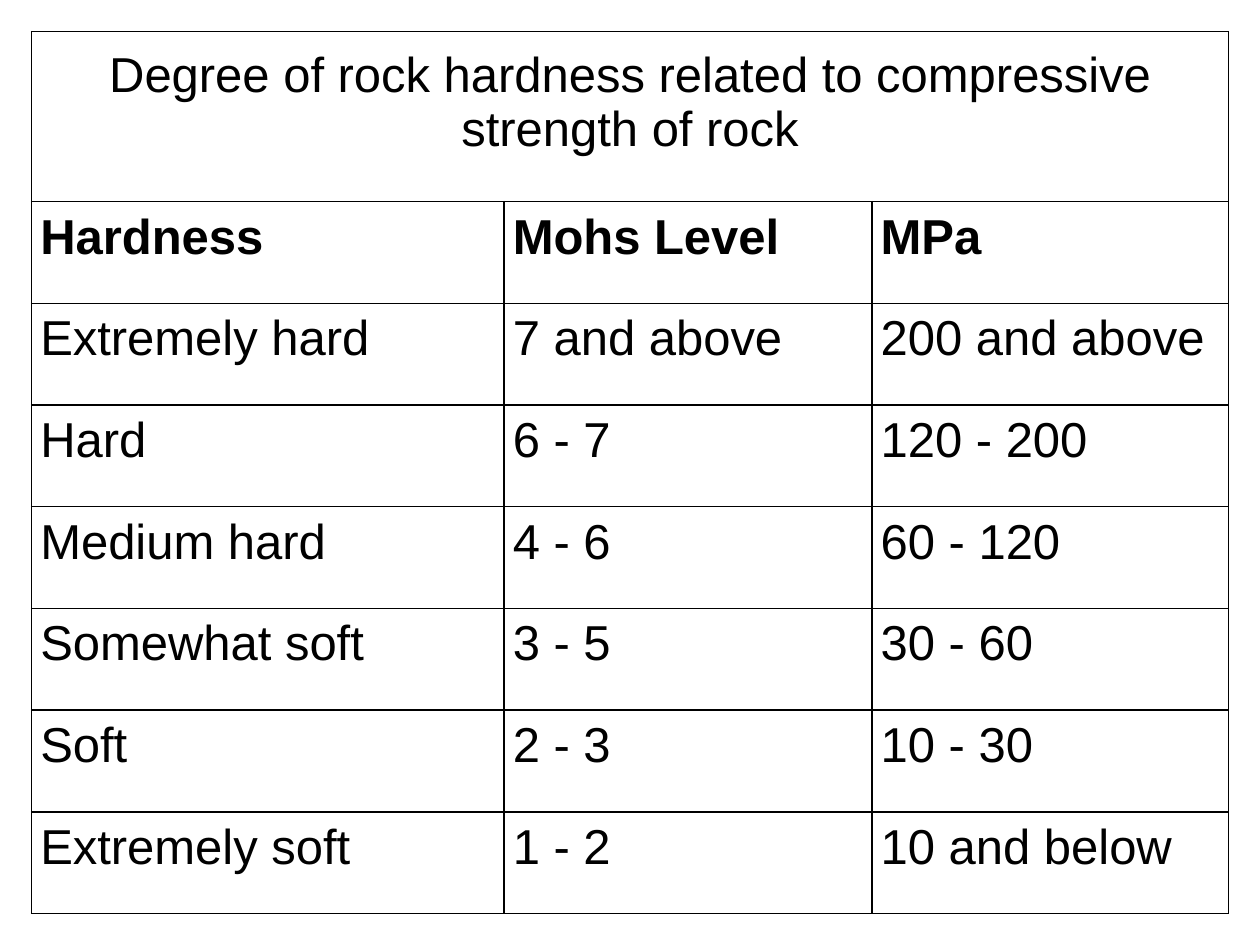
import pptx
import pptx.util
import pptx.dml.color
import pptx.enum.text
import pptx.oxml.ns
import lxml.etree

Inches, Pt = pptx.util.Inches, pptx.util.Pt

# Content
TITLE = "Degree of rock hardness related to compressive strength of rock"
ROWS = [
    ("Hardness", "Mohs Level", "MPa"),
    ("Extremely hard", "7 and above", "200 and above"),
    ("Hard", "6 - 7", "120 - 200"),
    ("Medium hard", "4 - 6", "60 - 120"),
    ("Somewhat soft", "3 - 5", "30 - 60"),
    ("Soft", "2 - 3", "10 - 30"),
    ("Extremely soft", "1 - 2", "10 and below"),
]

# Style and layout
COLORS = {"text": "000000", "border": "000000"}
FONT, SIZE = "Arial", 28
MARGIN = 0.25
WIDTH, HEIGHT = 9.5, 7
COL_WIDTHS = (3.75, 2.92, 2.83)
TITLE_HEIGHT = 1.35
ROW_HEIGHT = (HEIGHT - TITLE_HEIGHT) / len(ROWS)


def add_borders(cell):
    tcPr = cell._tc.get_or_add_tcPr()
    qn = pptx.oxml.ns.qn
    for i, side in enumerate(("a:lnL", "a:lnR", "a:lnT", "a:lnB")):
        ln = lxml.etree.Element(qn(side), w=str(Pt(1)))
        fill = lxml.etree.SubElement(ln, qn("a:solidFill"))
        lxml.etree.SubElement(fill, qn("a:srgbClr"), val=COLORS["border"])
        tcPr.insert(i, ln)


def write_cell(cell, text, bold=False, line_spacing=1.15):
    cell.text_frame.text = text
    p = cell.text_frame.paragraphs[0]
    p.line_spacing = line_spacing
    for r in p.runs:
        r.font.name = FONT
        r.font.size = Pt(SIZE)
        r.font.bold = bold
        r.font.color.rgb = pptx.dml.color.RGBColor.from_string(COLORS["text"])
    return p


prs = pptx.Presentation()
prs.slide_width, prs.slide_height = Inches(10), Inches(7.5)
s = prs.slides.add_slide(prs.slide_layouts[6])

# Table grid
table = s.shapes.add_table(len(ROWS) + 1, len(COL_WIDTHS), Inches(MARGIN),
                           Inches(MARGIN), Inches(WIDTH), Inches(HEIGHT)).table
table.first_row = table.horz_banding = False
for column, width in zip(table.columns, COL_WIDTHS):
    column.width = Inches(width)
for i, row in enumerate(table.rows):
    row.height = Inches(ROW_HEIGHT if i else TITLE_HEIGHT)
for cell in table.iter_cells():
    cell.margin_left = cell.margin_right = Inches(0.07)
    cell.margin_top = cell.margin_bottom = 0
    cell.fill.background()
    add_borders(cell)

# Title row across all columns
title = table.cell(0, 0)
title.merge(table.cell(0, len(COL_WIDTHS) - 1))
title.margin_top = Inches(0.13)
p = write_cell(title, TITLE, line_spacing=1.0)
p.alignment = pptx.enum.text.PP_ALIGN.CENTER

# Header and hardness rows
for i, values in enumerate(ROWS, start=1):
    for j, value in enumerate(values):
        write_cell(table.cell(i, j), value, bold=(i == 1))

prs.save("out.pptx")
